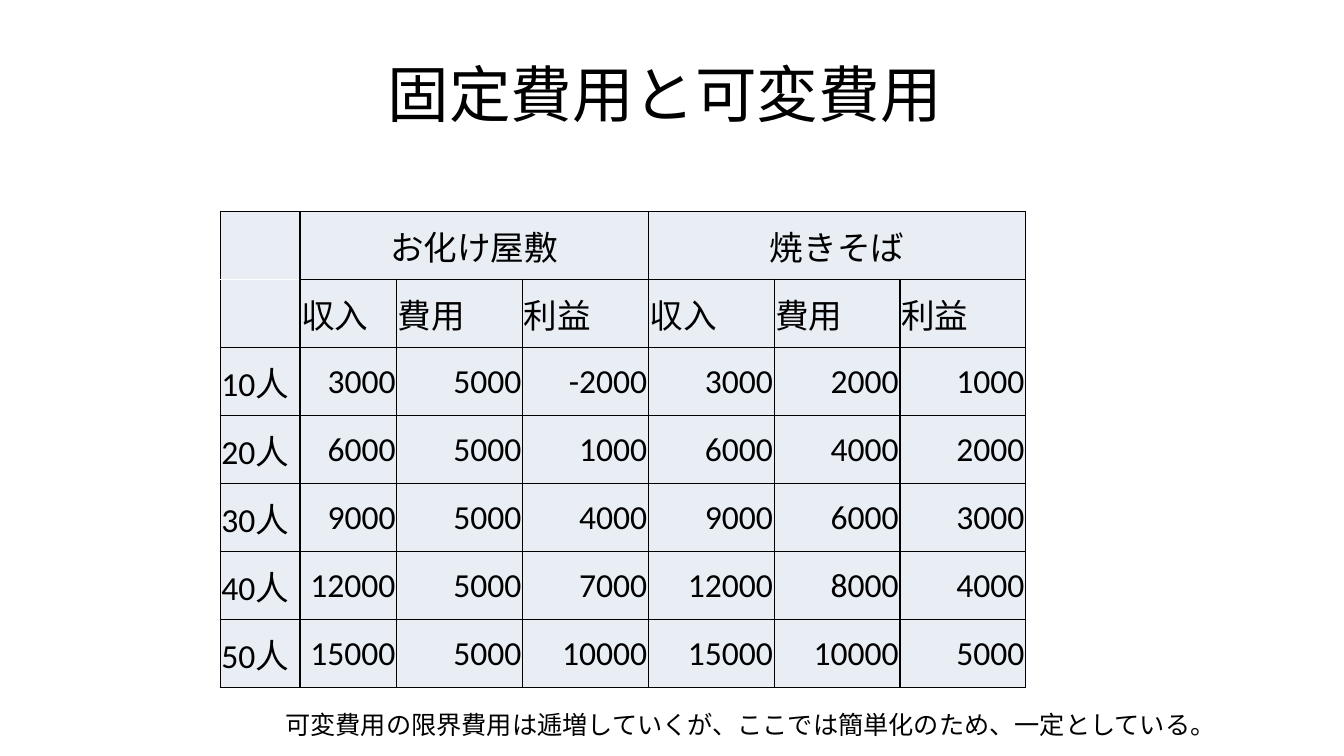
from lxml import etree
from pptx import Presentation
from pptx import util as u
from pptx.dml.color import RGBColor
from pptx.enum import text
from pptx.oxml import ns

BLACK = RGBColor(0x00, 0x00, 0x00)
WHITE = RGBColor(0xFF, 0xFF, 0xFF)
PALE_BLUE = RGBColor(0xE9, 0xED, 0xF4)
FONT = "Calibri"

STALLS = ["お化け屋敷", "焼きそば"]
MEASURES = ["収入", "費用", "利益"]
VISITORS = [10, 20, 30, 40, 50]
PRICE = 300
HAUNTED_HOUSE_FIXED_COST = 5000
NOODLE_UNIT_COST = 200
COLUMN_WIDTHS = [2.01, 2.44] + [3.17] * 5


def write(frame, words, size, align):
    para = frame.paragraphs[0]
    para.alignment = align
    span = para.add_run()
    span.text = words
    span.font.size = u.Pt(size)
    span.font.name = FONT
    span.font.color.rgb = BLACK


def place(shape, left, top, width, height):
    shape.left, shape.top = u.Cm(left), u.Cm(top)
    shape.width, shape.height = u.Cm(width), u.Cm(height)


def add_title(page, left, top, width, height):
    title = page.shapes.title
    place(title, left, top, width, height)
    title.text_frame.vertical_anchor = text.MSO_ANCHOR.MIDDLE
    write(title.text_frame, "固定費用と可変費用 ", 44, text.PP_ALIGN.CENTER)


def set_borders(cell, top=BLACK, bottom=BLACK):
    sides = {"a:lnL": BLACK, "a:lnR": BLACK, "a:lnT": top, "a:lnB": bottom}
    properties = cell._tc.get_or_add_tcPr()
    for side, color in sides.items():
        line = etree.SubElement(properties, ns.qn(side), w=str(u.Pt(1)))
        fill = etree.SubElement(line, ns.qn("a:solidFill"))
        etree.SubElement(fill, ns.qn("a:srgbClr"), val=str(color))


def profit_rows():
    """Two header rows, then income, cost and profit of each stall."""
    rows = [["", STALLS[0], "", "", STALLS[1], "", ""], [""] + MEASURES * 2]
    for count in VISITORS:
        income = PRICE * count
        row = [f"{count}人"]
        for cost in (HAUNTED_HOUSE_FIXED_COST, NOODLE_UNIT_COST * count):
            row += [income, cost, income - cost]
        rows.append([str(value) for value in row])
    return rows


def add_profit_table(page, left, top, height):
    rows = profit_rows()
    frame = page.shapes.add_table(
        len(rows), len(COLUMN_WIDTHS), u.Cm(left), u.Cm(top),
        u.Cm(sum(COLUMN_WIDTHS)), u.Cm(height))
    table = frame.table
    table.first_row = table.horz_banding = False
    for column, width in zip(table.columns, COLUMN_WIDTHS):
        column.width = u.Cm(width)

    for r, row in enumerate(rows):
        table.rows[r].height = u.Cm(height / len(rows))
        for c, words in enumerate(row):
            cell = table.cell(r, c)
            # The two blank corner cells meet at a white line
            if c == 0 and r == 0:
                set_borders(cell, bottom=WHITE)
            elif c == 0 and r == 1:
                set_borders(cell, top=WHITE)
            else:
                set_borders(cell)
            cell.fill.solid()
            cell.fill.fore_color.rgb = PALE_BLUE
            cell.vertical_anchor = text.MSO_ANCHOR.MIDDLE
            cell.margin_left = cell.margin_right = cell.margin_top = u.Cm(0.03)
            cell.margin_bottom = 0
            if r == 0:
                align = text.PP_ALIGN.CENTER
            elif r == 1 or c == 0:
                align = text.PP_ALIGN.LEFT
            else:
                align = text.PP_ALIGN.RIGHT
            if words:
                write(cell.text_frame, words, 24, align)

    # Each stall name spans its measures
    for first in (1, 1 + len(MEASURES)):
        table.cell(0, first).merge(table.cell(0, first + len(MEASURES) - 1))


def add_note(page, left, top, width, height):
    note = page.shapes.add_textbox(
        u.Cm(left), u.Cm(top), u.Cm(width), u.Cm(height))
    note.text_frame.word_wrap = True
    write(note.text_frame,
          "可変費用の限界費用は逓増していくが、ここでは簡単化のため、一定としている。",
          18, text.PP_ALIGN.LEFT)


def main():
    deck = Presentation()
    deck.slide_width, deck.slide_height = u.Cm(33.87), u.Cm(19.05)
    page = deck.slides.add_slide(deck.slide_layouts[5])
    add_title(page, 1.69, 0.76, 30.48, 3.18)
    add_profit_table(page, 5.55, 5.33, 12)
    add_note(page, 6.94, 17.74, 24.78, 1.03)
    deck.save("out.pptx")


if __name__ == "__main__":
    main()
